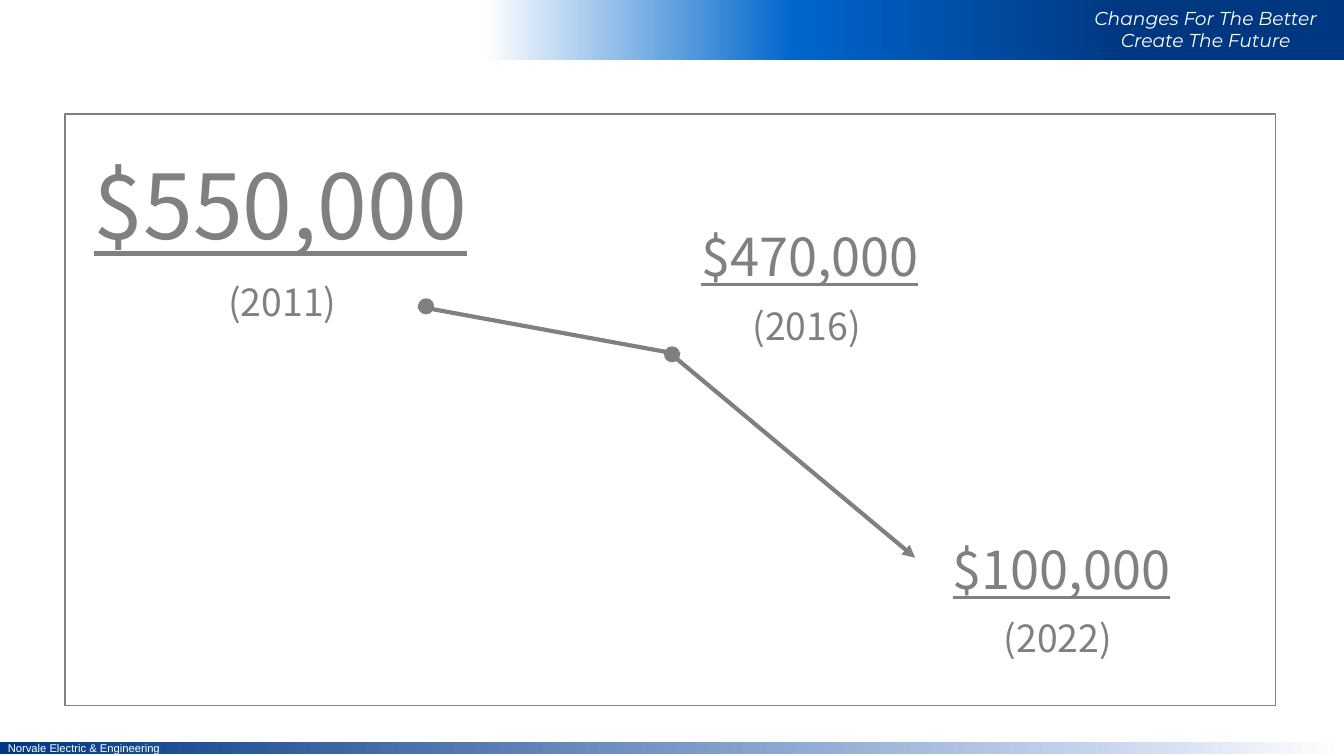
from typing import NamedTuple

from lxml.etree import SubElement
from pptx import Presentation
from pptx.dml.color import RGBColor
from pptx.enum.shapes import MSO_CONNECTOR as Connector, MSO_SHAPE as Shape
from pptx.enum.text import MSO_AUTO_SIZE as AutoSize, PP_ALIGN as Align
from pptx.oxml.ns import qn
from pptx.util import Pt

COLORS = {
    "white": "FFFFFF",
    "gray": "808080",
    "navy": "003781",
    "blue": "0066CC",
    "pale": "C2D1ED",
}
LABEL_FONT = "Noto Sans CJK TC"
SLIDE_WIDTH, SLIDE_HEIGHT = 720, 405
DOT_SIZE = 8.64
LINE_WIDTH = 2.25


class Box(NamedTuple):
    left: float
    top: float
    width: float
    height: float


class TextStyle(NamedTuple):
    font: str
    size: float
    color: str
    italic: bool = False
    underline: bool = False


class Band(NamedTuple):
    box: Box
    stops: list[tuple[int, str]]


class Milestone(NamedTuple):
    amount: str
    amount_size: float
    amount_box: Box
    year: str
    year_box: Box


BANDS = [
    Band(Box(0, 397.5, SLIDE_WIDTH, 6.5), [(0, "navy"), (80, "pale"), (100, "white")]),
    Band(
        Box(0, 0, SLIDE_WIDTH, 32.2),
        [(0, "white"), (36, "white"), (59, "blue"), (84, "navy"), (100, "navy")],
    ),
]
MILESTONES = [
    Milestone("$550,000", 48, Box(43.2, 77, 237.6, 65.5),
              "(2011)", Box(115.2, 146.2, 85, 31.7)),
    Milestone("$470,000", 28, Box(368.6, 116.6, 143.3, 41),
              "(2016)", Box(396, 159.1, 85, 31.7)),
    Milestone("$100,000", 28, Box(503.3, 284.4, 143.3, 41),
              "(2022)", Box(530.6, 326.2, 85, 31.7)),
]


def rgb(name: str) -> RGBColor:
    return RGBColor.from_string(COLORS[name])


def add_shape(shapes, kind: Shape, box: Box):
    shape = shapes.add_shape(kind, *map(Pt, box))
    shape.shadow.inherit = False
    shape.line.fill.background()
    return shape


def add_band(shapes, band: Band) -> None:
    """Draw a rectangle with a left-to-right gradient of any number of stops."""
    shape = add_shape(shapes, Shape.RECTANGLE, band.box)
    shape.fill.gradient()
    shape.fill.gradient_angle = 0
    stop_list = shape.element.spPr.find(qn("a:gradFill")).find(qn("a:gsLst"))
    for stop in list(stop_list):
        stop_list.remove(stop)
    for percent, color in band.stops:
        stop = SubElement(stop_list, qn("a:gs"), pos=str(percent * 1000))
        SubElement(stop, qn("a:srgbClr"), val=COLORS[color])


def add_text(shapes, box: Box, lines: list[str], style: TextStyle,
             align: Align = Align.LEFT, wrap: bool = True) -> None:
    frame = shapes.add_textbox(*map(Pt, box)).text_frame
    frame.word_wrap = wrap
    frame.auto_size = AutoSize.SHAPE_TO_FIT_TEXT
    frame.text = "\n".join(lines)
    for paragraph in frame.paragraphs:
        paragraph.alignment = align
        font = paragraph.font
        font.name = style.font
        font.size = Pt(style.size)
        font.color.rgb = rgb(style.color)
        font.italic = style.italic
        font.underline = style.underline


def add_milestone(shapes, milestone: Milestone) -> None:
    group = shapes.add_group_shape().shapes
    add_text(group, milestone.year_box, [milestone.year],
             TextStyle(LABEL_FONT, 20, "gray"))
    add_text(group, milestone.amount_box, [milestone.amount],
             TextStyle(LABEL_FONT, milestone.amount_size, "gray", underline=True))


def add_trend_line(shapes, start: tuple[float, float], end: tuple[float, float],
                   arrow: bool = False) -> None:
    line = shapes.add_connector(Connector.STRAIGHT, *map(Pt, (*start, *end)))
    line.line.color.rgb = rgb("gray")
    line.line.width = Pt(LINE_WIDTH)
    if arrow:
        SubElement(line.line._get_or_add_ln(), qn("a:tailEnd"), type="triangle")
    SubElement(line.element.spPr, qn("a:effectLst"))


def add_dot(shapes, left: float, top: float) -> None:
    dot = add_shape(shapes, Shape.OVAL, Box(left, top, DOT_SIZE, DOT_SIZE))
    dot.fill.solid()
    dot.fill.fore_color.rgb = rgb("gray")


def main() -> None:
    presentation = Presentation()
    presentation.slide_width = Pt(SLIDE_WIDTH)
    presentation.slide_height = Pt(SLIDE_HEIGHT)
    slide = presentation.slides.add_slide(presentation.slide_layouts[6])
    shapes = slide.shapes

    for band in BANDS:
        add_band(shapes, band)
    add_text(shapes, Box(-2.9, 393.8, 128.2, 14.4),
             ["Norvale Electric & Engineering Corporation"],
             TextStyle("Arial", 6, "white"), wrap=False)
    add_text(shapes, Box(573.1, 0, 145.4, 31.7),
             ["Changes For The Better", "Create The Future"],
             TextStyle("Montserrat", 10, "white", italic=True), Align.CENTER, wrap=False)

    frame = add_shape(shapes, Shape.RECTANGLE, Box(34.6, 61.2, 648.7, 316.8))
    frame.fill.background()
    frame.line.color.rgb = rgb("gray")
    frame.line.width = Pt(1)

    for milestone in MILESTONES:
        add_milestone(shapes, milestone)

    add_trend_line(shapes, (360, 190.1), (490.3, 298.8), arrow=True)
    add_dot(shapes, 355.7, 185.5)
    add_dot(shapes, 223.9, 159.8)
    add_trend_line(shapes, (223.9, 164.2), (364.3, 189.9))

    presentation.save("out.pptx")


if __name__ == "__main__":
    main()
